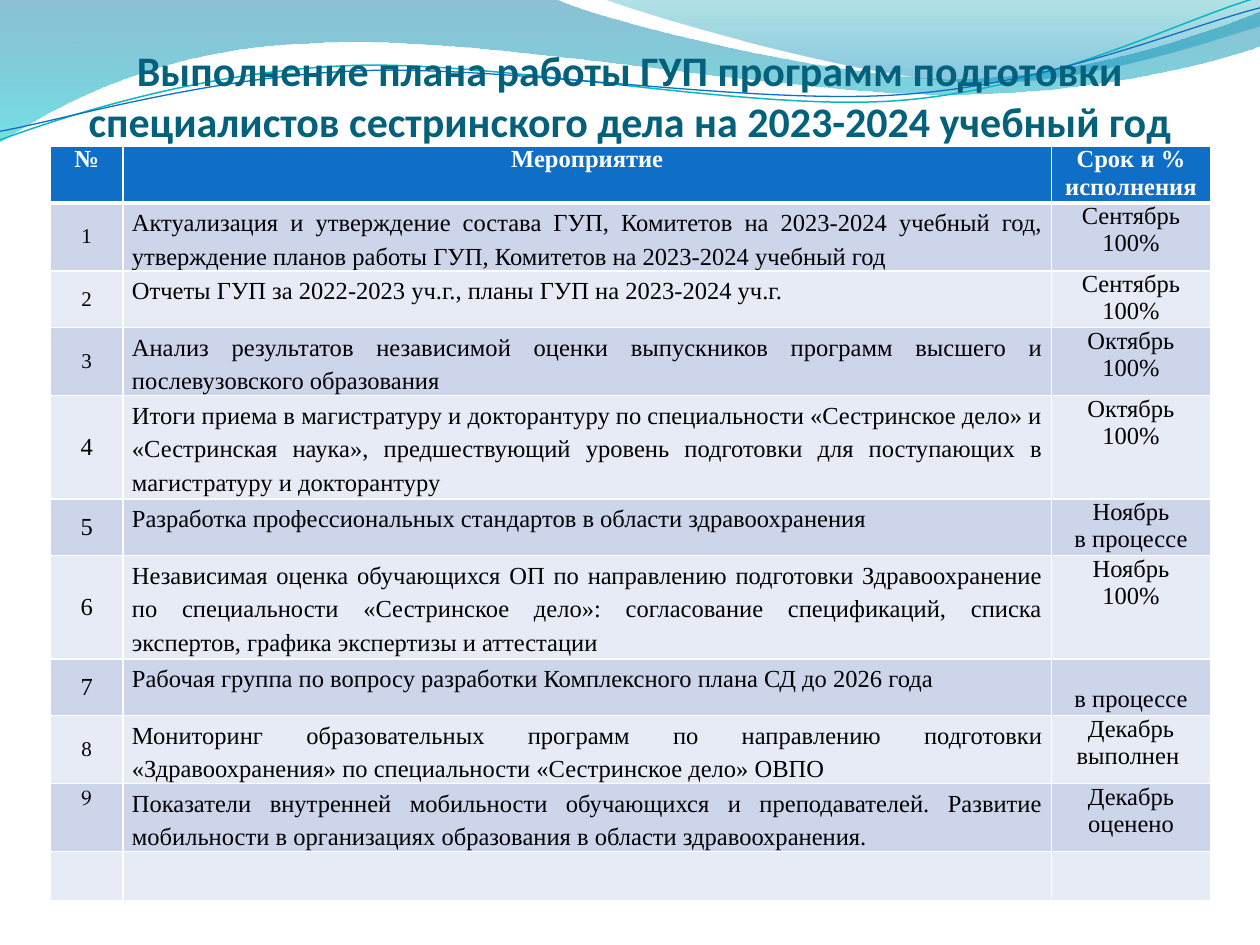
import math

import pptx
import pptx.dml.color
import pptx.enum.text
import pptx.oxml
import pptx.util
from lxml import etree

Pt = pptx.util.Pt
qn = pptx.oxml.ns.qn
ALIGN = pptx.enum.text.PP_ALIGN
ANCHOR = pptx.enum.text.MSO_ANCHOR
SERIF = "Times New Roman"
UNITS = 100  # freeform units per point


def color(value):
    return pptx.dml.color.RGBColor.from_string(value)


def write(para, text, align, spacing=None, **font_format):
    para.alignment = align
    if spacing:
        para.line_spacing = spacing
    span = para.add_run()
    span.text = text
    span.font.color.rgb = color(font_format.pop("color", "000000"))
    for name, value in font_format.items():
        setattr(span.font, name, value)


deck = pptx.Presentation()
deck.slide_width, deck.slide_height = Pt(720), Pt(540)
page = deck.slides.add_slide(deck.slide_layouts[5])

# Header waves in points: a pair is a straight step, six numbers are a Bézier curve
waves = [
    {"start": (0, 0),
     "steps": [(317, -0.7), (343, 12, 478, 45, 546, 45), (614, 45, 690, 19, 720, 6.5),
               (720.7, 26), (708, 32, 626, 55, 537, 54), (448, 54, 275, 20, 185, 24.5),
               (93, 26, 33, 60, -0.7, 81.4), (0, 0)],
     "stops": [(0, "0074A1", 45), (1, "00C6CF", 55)]},
    {"start": (345, -0.7),
     "steps": [(366, 8, 491, 45, 554, 47), (616, 50, 692, 23, 720, 15), (720, 0),
               (345, -0.7)],
     "stops": [(0, "00A1A9", 30), (0.8, "008BBF", 45)]},
    {"start": (0, 80),
     "steps": [(35, 67, 114, 41, 199, 37.5), (284, 34, 427, 64, 513, 57.5),
               (600, 51, 675, 11, 719, -1.5)],
     "line": ("0AB8BF", 0.85), "turn": -2.7, "center": (359.3, 41.4)},
    {"start": (0, 75),
     "steps": [(34, 69, 118, 44, 204, 40.5), (290, 37, 430, 60.5, 516, 54),
               (602, 48, 678, 15, 720, 4.5)],
     "line": ("0F6FC6", 0.75), "turn": -2.7, "center": (359.6, 42.5)},
]
for wave in waves:
    points = [wave["start"]]
    for step in wave["steps"]:
        points += zip(step[::2], step[1::2])
    turn = wave.get("turn", 0)
    cos, sin = math.cos(math.radians(turn)), math.sin(math.radians(turn))
    mid_x, mid_y = wave.get("center", (0, 0))
    points = [((mid_x + (x - mid_x) * cos + (y - mid_y) * sin) * UNITS,
               (mid_y - (x - mid_x) * sin + (y - mid_y) * cos) * UNITS) for x, y in points]
    builder = page.shapes.build_freeform(*points[0], scale=Pt(1) / UNITS)
    builder.add_line_segments(points[1:], close="stops" in wave)
    shape = builder.convert_to_shape()
    shape.shadow.inherit = False
    shape.rotation = turn % 360

    # Join each three control points into one curve
    segments = iter(list(shape._element.spPr.iter(qn("a:lnTo"))))
    for step in wave["steps"]:
        segment = next(segments)
        if len(step) == 6:
            segment.tag = qn("a:cubicBezTo")
            for _ in range(2):
                control = next(segments)
                segment.append(control[0])
                control.getparent().remove(control)

    if "line" in wave:
        shape.fill.background()
        shape.line.color.rgb = color(wave["line"][0])
        shape.line.width = Pt(wave["line"][1])
        continue
    shape.line.fill.background()
    shape.fill.gradient()
    shape.fill.gradient_angle = 270
    for stop, (position, tone, _) in zip(shape.fill.gradient_stops, wave["stops"]):
        stop.position = position
        stop.color.rgb = color(tone)
    tones = shape._element.spPr.iter(qn("a:srgbClr"))
    for tone, (_, _, opacity) in zip(tones, wave["stops"]):
        etree.SubElement(tone, qn("a:alpha"), val=str(opacity * 1000))

# Plan table: number size, activity, term and status
header = ["№", "Мероприятие", "Срок и % исполнения"]
activities = [
    (12, "Актуализация и утверждение состава ГУП, Комитетов на 2023-2024 учебный год, "
         "утверждение планов работы ГУП, Комитетов на 2023-2024 учебный год",
     ["Сентябрь", "100%"]),
    (12, "Отчеты ГУП за 2022-2023 уч.г., планы ГУП на 2023-2024 уч.г.",
     ["Сентябрь", "100%"]),
    (12, "Анализ результатов независимой оценки выпускников программ высшего и "
         "послевузовского образования ", ["Октябрь", "100%"]),
    (14, "Итоги приема в магистратуру и докторантуру по специальности «Сестринское дело» "
         "и «Сестринская наука», предшествующий уровень подготовки для поступающих в "
         "магистратуру и докторантуру", ["Октябрь", "100%"]),
    (14, "Разработка профессиональных стандартов в области здравоохранения",
     ["Ноябрь", "в процессе"]),
    (14, "Независимая оценка обучающихся ОП по направлению подготовки Здравоохранение "
         "по специальности «Сестринское дело»: согласование спецификаций, списка "
         "экспертов, графика экспертизы и аттестации", ["Ноябрь", "100%"]),
    (14, "Рабочая группа по вопросу разработки Комплексного плана СД до 2026 года",
     ["в процессе"]),
    (12, "Мониторинг образовательных программ по направлению подготовки "
         "«Здравоохранения» по специальности «Сестринское дело» ОВПО",
     ["Декабрь", "выполнен "]),
    (12, "Показатели внутренней мобильности обучающихся и преподавателей. Развитие "
         "мобильности в организациях образования в области здравоохранения.",
     ["Декабрь", "оценено"]),
]
short, medium, tall = 32.4, 38.88, 59.04
widths = [41.5, 530.6, 90.8]
heights = [short, medium, short, medium, tall, short, tall, short, medium, medium, 28]
table = page.shapes.add_table(len(heights), len(widths), Pt(28.8), Pt(83.52),
                              Pt(sum(widths)), Pt(sum(heights))).table
for column, width in zip(table.columns, widths):
    column.width = Pt(width)
for r, (row, height) in enumerate(zip(table.rows, heights)):
    row.height = Pt(height)
    for cell in row.cells:
        cell.fill.solid()
        cell.fill.fore_color.rgb = color("0F6FC6" if r == 0 else ("E7EBF5", "CCD5EA")[r % 2])
        cell.margin_left = cell.margin_right = Pt(5.1)
        cell.margin_top = cell.margin_bottom = 0

borders = {"a:lnL": 1, "a:lnR": 1, "a:lnT": 1, "a:lnB": 3}
for cell, text in zip(table.rows[0].cells, header):
    write(cell.text_frame.paragraphs[0], text, ALIGN.CENTER,
          name=SERIF, size=Pt(14), bold=True, color="FFFFFF")
    for i, (side, width) in enumerate(borders.items()):
        border = etree.Element(qn(side), w=str(Pt(width)))
        fill = etree.SubElement(border, qn("a:solidFill"))
        etree.SubElement(fill, qn("a:srgbClr"), val="FFFFFF")
        cell._tc.tcPr.insert(i, border)

for number, (size, activity, status) in enumerate(activities, 1):
    number_cell, activity_cell, status_cell = table.rows[number].cells
    last = number == len(activities)
    number_cell.vertical_anchor = ANCHOR.TOP if last else ANCHOR.MIDDLE
    if last:
        number_cell.margin_top = Pt(3.6)
    write(number_cell.text_frame.paragraphs[0], str(number), ALIGN.CENTER,
          name="TeX Gyre Pagella" if last else SERIF, size=Pt(size))
    write(activity_cell.text_frame.paragraphs[0], activity, ALIGN.JUSTIFY, 1.25,
          name=SERIF, size=Pt(14))
    if len(status) == 1:
        status_cell.vertical_anchor = ANCHOR.BOTTOM
        status_cell.margin_bottom = Pt(1.7)
    for i, text in enumerate(status):
        frame = status_cell.text_frame
        para = frame.add_paragraph() if i else frame.paragraphs[0]
        write(para, text, ALIGN.CENTER, name=SERIF, size=Pt(14))

# Title, in front of the waves
title = page.shapes.title
page.shapes._spTree.append(title._element)
title_place = {"left": 36, "top": 20.5, "width": 648, "height": 62.64}
for name, value in title_place.items():
    setattr(title, name, Pt(value))
frame_format = {"margin_left": 0, "margin_right": 0, "margin_top": Pt(3.6),
                "margin_bottom": 0, "vertical_anchor": ANCHOR.BOTTOM, "word_wrap": True,
                "auto_size": pptx.enum.text.MSO_AUTO_SIZE.NONE}
for name, value in frame_format.items():
    setattr(title.text_frame, name, value)
write(title.text_frame.paragraphs[0],
      "Выполнение плана работы ГУП программ подготовки специалистов сестринского дела "
      "на 2023-2024 учебный год",
      ALIGN.CENTER, name="Calibri", size=Pt(24), bold=True, color="04617B")

deck.save("out.pptx")
